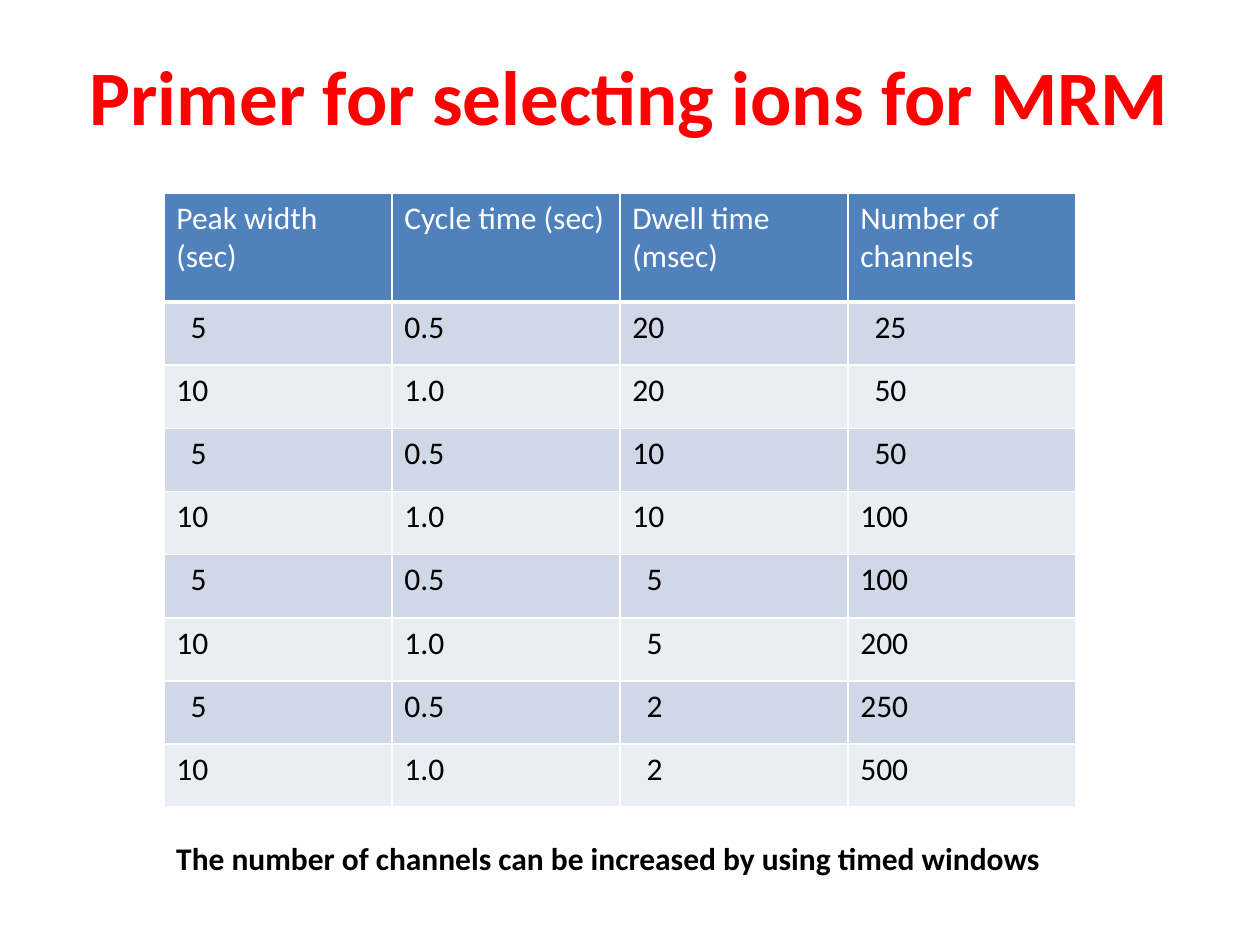
from lxml import etree
from pptx import Presentation
from pptx.dml.color import RGBColor
from pptx.enum import text as t
from pptx.oxml import ns
from pptx.util import Pt

TITLE = "Primer for selecting ions for MRM"
HEADER = ("Peak width (sec)", "Cycle time (sec)", "Dwell time (msec)", "Number of channels")
SETTINGS = [
    ("5", "0.5", "20", "25"),
    ("10", "1.0", "20", "50"),
    ("5", "0.5", "10", "50"),
    ("10", "1.0", "10", "100"),
    ("5", "0.5", "5", "100"),
    ("10", "1.0", "5", "200"),
    ("5", "0.5", "2", "250"),
    ("10", "1.0", "2", "500"),
]
NOTE = "The number of channels can be increased by using timed windows"

RED = RGBColor(0xFF, 0x00, 0x00)
BLACK = RGBColor(0x00, 0x00, 0x00)
WHITE = RGBColor(0xFF, 0xFF, 0xFF)
BLUE = RGBColor(0x4F, 0x81, 0xBD)
BANDS = (RGBColor(0xD0, 0xD8, 0xE8), RGBColor(0xE9, 0xED, 0xF4))

TABLE_LEFT, TABLE_TOP = 93.6, 110.2
COLUMN_WIDTH, HEADER_HEIGHT, ROW_HEIGHT = 130.3, 62.4, 36.1
CELL_MARGIN, SHORT_INDENT = 7.2, 8.1


def style(paragraph, size, color, bold=False):
    font = paragraph.font
    font.name, font.size, font.bold = "Calibri", Pt(size), bold
    font.color.rgb = color


def add_line(slide, content, box, size, color, wrap):
    frame = slide.shapes.add_textbox(*map(Pt, box)).text_frame
    frame.word_wrap = wrap
    frame.text = content
    style(frame.paragraphs[0], size, color, bold=True)
    return frame


def set_borders(cell, bottom):
    properties = cell._tc.get_or_add_tcPr()
    widths = {"lnL": 1, "lnR": 1, "lnT": 1, "lnB": bottom}
    for position, (side, width) in enumerate(widths.items()):
        line = etree.Element(ns.qn(f"a:{side}"), w=str(Pt(width)))
        fill = etree.SubElement(line, ns.qn("a:solidFill"))
        etree.SubElement(fill, ns.qn("a:srgbClr"), val=str(WHITE))
        properties.insert(position, line)


def add_settings_table(slide):
    rows = [HEADER, *SETTINGS]
    table = slide.shapes.add_table(
        len(rows), len(HEADER), Pt(TABLE_LEFT), Pt(TABLE_TOP),
        Pt(COLUMN_WIDTH * len(HEADER)),
        Pt(HEADER_HEIGHT + ROW_HEIGHT * len(SETTINGS))).table
    widest = [max(map(len, column)) for column in zip(*SETTINGS)]
    for column in table.columns:
        column.width = Pt(COLUMN_WIDTH)
    for r, values in enumerate(rows):
        is_header = r == 0
        table.rows[r].height = Pt(HEADER_HEIGHT if is_header else ROW_HEIGHT)
        for c, value in enumerate(values):
            cell = table.cell(r, c)
            cell.text = value
            style(cell.text_frame.paragraphs[0], 18, WHITE if is_header else BLACK)
            indent = SHORT_INDENT if len(value) < widest[c] else 0
            cell.margin_left = Pt(CELL_MARGIN + indent)
            cell.fill.solid()
            cell.fill.fore_color.rgb = BLUE if is_header else BANDS[(r - 1) % 2]
            set_borders(cell, bottom=3 if is_header else 1)


def main():
    deck = Presentation()
    deck.slide_width, deck.slide_height = Pt(720), Pt(540)
    slide = deck.slides.add_slide(deck.slide_layouts[6])

    title = add_line(slide, TITLE, (36, 21.6, 648, 90), 44, RED, wrap=True)
    title.margin_top = Pt(6)
    title.paragraphs[0].alignment = t.PP_ALIGN.CENTER

    add_settings_table(slide)

    note = add_line(slide, NOTE, (TABLE_LEFT, 476, 514, 29), 18, BLACK, wrap=False)
    note.auto_size = t.MSO_AUTO_SIZE.SHAPE_TO_FIT_TEXT

    deck.save("out.pptx")


if __name__ == "__main__":
    main()
